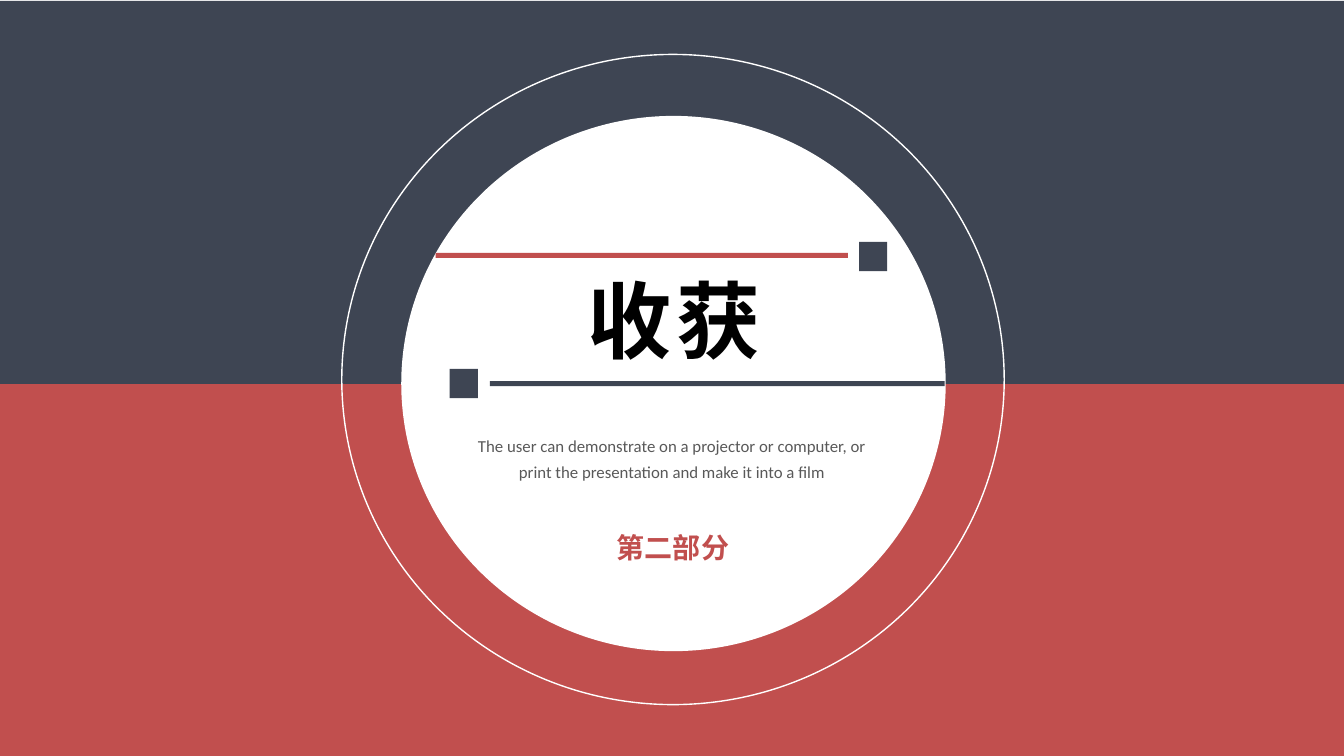
from lxml import etree
from pptx import Presentation
from pptx.dml.color import RGBColor
from pptx.enum.shapes import MSO_SHAPE as SHAPE
from pptx.enum.text import MSO_AUTO_SIZE as AUTO, PP_ALIGN as ALIGN
from pptx.oxml.ns import qn
from pptx.util import Inches, Pt

WHITE = RGBColor(0xFF, 0xFF, 0xFF)
BLACK = RGBColor(0x00, 0x00, 0x00)
GREY = RGBColor(0x59, 0x59, 0x59)
RED = RGBColor(0xC1, 0x4F, 0x4E)
NAVY = RGBColor(0x3E, 0x45, 0x53)
CJK, LATIN = "Noto Sans CJK SC", "Calibri"

# Content: left, top, width, height in inches
BANDS = [(0, 3.19, 13.33, 4.31, RED), (0, 0.01, 13.33, 3.8, NAVY)]
DISC = (3.98, 1.15, 5.4, 5.31)
RING = (3.39, 0.54, 6.57, 6.45)
BARS = [(4.32, 2.51, 4.09, 0.05, RED), (4.86, 3.78, 4.51, 0.05, NAVY)]
SQUARES = [(8.52, 2.4, 0.28, 0.29, NAVY), (4.46, 3.66, 0.28, 0.29, NAVY)]
# Text, box, size, font, colour, bold, line spacing, letter spacing in points
TEXTS = [
    ("收获", (4.67, 2.61, 4.03, 1.11), 60, CJK, BLACK, True, 1.0, 3),
    ("第二部分", (5.87, 5.21, 1.61, 0.44), 20, CJK, RED, True, 1.0, 0),
    ("The user can demonstrate on a projector or computer, or print the "
     "presentation and make it into a film",
     (4.5, 4.21, 4.33, 0.6), 12, LATIN, GREY, False, 1.3, 0),
]


def add_shape(s, kind, box, fill=None, line=None):
    sp = s.shapes.add_shape(kind, *map(Inches, box))
    sp.shadow.inherit = False
    if fill is None:
        sp.fill.background()
    else:
        sp.fill.solid()
        sp.fill.fore_color.rgb = fill
    if line is None:
        sp.line.fill.background()
    else:
        sp.line.color.rgb = line
        sp.line.width = Pt(1)


def add_text(s, text, box, size, font, color, bold, leading, tracking):
    tf = s.shapes.add_textbox(*map(Inches, box)).text_frame
    tf.word_wrap = True
    tf.auto_size = AUTO.SHAPE_TO_FIT_TEXT
    p = tf.paragraphs[0]
    p.text = text
    p.alignment = ALIGN.CENTER
    p.line_spacing = leading
    f = p.font
    f.size, f.bold, f.name = Pt(size), bold, font
    f.color.rgb = color
    # East Asian typeface and letter spacing
    props = p._p.pPr.find(qn("a:defRPr"))
    etree.SubElement(props, qn("a:ea")).set("typeface", font)
    if tracking:
        props.set("spc", str(tracking * 100))


prs = Presentation()
prs.slide_width, prs.slide_height = Inches(13.33), Inches(7.5)
s = prs.slides.add_slide(prs.slide_layouts[6])

# Background bands
for *box, color in BANDS:
    add_shape(s, SHAPE.RECTANGLE, box, color)

# Central disc and ring
add_shape(s, SHAPE.OVAL, DISC, fill=WHITE)
add_shape(s, SHAPE.OVAL, RING, line=WHITE)

# Title bars with end squares
for *box, color in SQUARES + BARS:
    add_shape(s, SHAPE.RECTANGLE, box, color)

# Title, section label and description
for item in TEXTS:
    add_text(s, *item)

prs.save("out.pptx")
